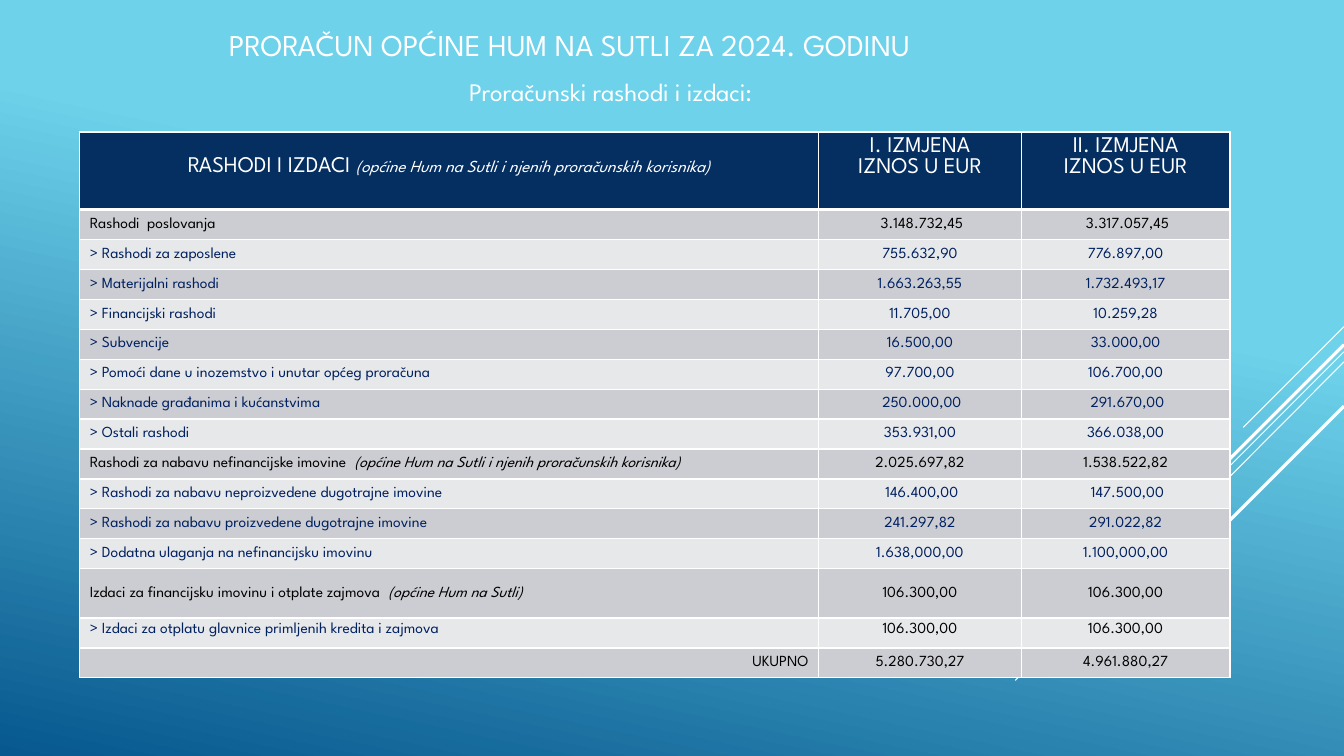
from lxml.etree import SubElement
from pptx import Presentation
from pptx.dml.color import RGBColor
from pptx.enum.shapes import MSO_CONNECTOR
from pptx.enum.text import MSO_ANCHOR, MSO_AUTO_SIZE, PP_ALIGN
from pptx.oxml.ns import qn
from pptx.util import Inches, Pt

FONT = "League Spartan"
WHITE, BLACK, NAVY, HEADER = "FFFFFF", "000000", "002060", "052F61"
BANDS = ["CCCDD2", "E7E8EA"]
USERS_NOTE = "(općine Hum na Sutli i njenih proračunskih korisnika)"
COLUMN_WIDTHS = [7.33, 2.01, 2.07]
TABLE_HEIGHT, HEADER_HEIGHT, LOANS_HEIGHT = 5.42, 0.77, 0.49
LOANS_ROW, REPAYMENT_ROW, TOTAL_ROW = 13, 14, 15

EXPENSES = [
    ("Rashodi  poslovanja", "", " 3.148.732,45", " 3.317.057,45"),
    ("> Rashodi za zaposlene", "", "755.632,90", "776.897,00"),
    ("> Materijalni rashodi", "", "1.663.263,55", "1.732.493,17"),
    ("> Financijski rashodi", "", "11.705,00", "10.259,28"),
    ("> Subvencije", "", "16.500,00", "33.000,00"),
    ("> Pomoći dane u inozemstvo i unutar općeg proračuna", "", "97.700,00", "106.700,00"),
    ("> Naknade građanima i kućanstvima", "", " 250.000,00", " 291.670,00"),
    ("> Ostali rashodi", "", "353.931,00", "366.038,00"),
    ("Rashodi za nabavu nefinancijske imovine  ", USERS_NOTE, "2.025.697,82", "1.538.522,82"),
    ("> Rashodi za nabavu neproizvedene dugotrajne imovine", "", " 146.400,00", " 147.500,00"),
    ("> Rashodi za nabavu proizvedene dugotrajne imovine", "", "241.297,82", "291.022,82"),
    ("> Dodatna ulaganja na nefinancijsku imovinu", "", "1.638,000,00", "1.100,000,00"),
    ("Izdaci za financijsku imovinu i otplate zajmova  ", "(općine Hum na Sutli) ",
     "106.300,00", "106.300,00"),
    ("> Izdaci za otplatu glavnice primljenih kredita i zajmova", "", "106.300,00", "106.300,00"),
    ("UKUPNO", "", "5.280.730,27", "4.961.880,27"),
]

RAYS = [
    (3.24, 12.33, 4.24, 0.75),
    (3.49, 10.07, 6.75, 0.75),
    (3.59, 11.26, 5.67, 0.75),
    (3.42, 11.42, 5.33, 2.25),
    (4.03, 11.94, 5.42, 2.25),
]


def color(value):
    """Turn a hex string into a colour."""
    return RGBColor.from_string(value)


def add_run(paragraph, text, size, text_color, italic=False):
    """Append one formatted run."""
    run = paragraph.add_run()
    run.text = text
    run.font.name = FONT
    run.font.size = Pt(size)
    run.font.bold = False
    run.font.italic = italic
    run.font.color.rgb = color(text_color)


def set_background(slide):
    """Fill the slide with a blue gradient."""
    fill = slide.background.fill
    fill.gradient()
    fill.gradient_angle = 258
    for stop, (position, value) in zip(fill.gradient_stops, [(0.35, "6ED2EB"), (1, "06588E")]):
        stop.position = position
        stop.color.rgb = color(value)


def add_ray(slide, top, end_left, end_top, width):
    """Draw a diagonal line from the right edge of the slide."""
    ray = slide.shapes.add_connector(
        MSO_CONNECTOR.STRAIGHT, Inches(13.33), Inches(top), Inches(end_left), Inches(end_top))
    ray.line.color.rgb = color(WHITE)
    ray.line.width = Pt(width)
    SubElement(ray._element.spPr, qn("a:effectLst"))


def write_heading(shape, box, text, size, alignment, anchor):
    """Place a text shape and write its single line."""
    shape.left, shape.top, shape.width, shape.height = [Inches(length) for length in box]
    frame = shape.text_frame
    frame.word_wrap = True
    frame.auto_size = MSO_AUTO_SIZE.NONE
    frame.vertical_anchor = anchor
    paragraph = frame.paragraphs[0]
    paragraph.alignment = alignment
    add_run(paragraph, text, size, WHITE)


def style_cell(cell, fill_color, top=1, bottom=1, anchor=MSO_ANCHOR.MIDDLE):
    """Give a cell white borders, a fill and an anchor."""
    properties = cell._tc.get_or_add_tcPr()
    for tag, width in [("lnL", 1), ("lnR", 1), ("lnT", top), ("lnB", bottom)]:
        line = SubElement(properties, qn(f"a:{tag}"), w=str(Pt(width)))
        solid = SubElement(line, qn("a:solidFill"))
        SubElement(solid, qn("a:srgbClr"), val=WHITE)
    cell.fill.solid()
    cell.fill.fore_color.rgb = color(fill_color)
    cell.vertical_anchor = anchor


def write_cell(cell, lines, alignment):
    """Write lines, each a list of run settings, into a cell."""
    frame = cell.text_frame
    for index, runs in enumerate(lines):
        paragraph = frame.add_paragraph() if index else frame.paragraphs[0]
        paragraph.alignment = alignment
        for run in runs:
            add_run(paragraph, *run)


def fill_header(table):
    """Write the header row."""
    headings = [[[("RASHODI I IZDACI ", 16, WHITE), (USERS_NOTE, 12, WHITE, True)]]]
    for edition in ["I. IZMJENA", "II. IZMJENA"]:
        headings.append([[(edition, 16, WHITE)], [("IZNOS U EUR", 16, WHITE)]])
    for column, lines in enumerate(headings):
        cell = table.cell(0, column)
        style_cell(cell, HEADER, bottom=3, anchor=MSO_ANCHOR.TOP)
        write_cell(cell, lines, PP_ALIGN.CENTER)
    table.cell(0, 0).margin_top = Inches(0.25)


def fill_expense(table, row, label, note, *amounts):
    """Write one expense row."""
    label_color = NAVY if label.startswith(">") else BLACK
    amount_color = BLACK if row == REPAYMENT_ROW else label_color
    label_runs = [(label, 11, label_color)]
    if note:
        label_runs.append((note, 11, label_color, True))
    contents = [label_runs] + [[(amount, 11, amount_color)] for amount in amounts]
    anchor = MSO_ANCHOR.TOP if row == REPAYMENT_ROW else MSO_ANCHOR.MIDDLE
    label_alignment = {LOANS_ROW: PP_ALIGN.JUSTIFY, TOTAL_ROW: PP_ALIGN.RIGHT}.get(row, PP_ALIGN.LEFT)
    for column, runs in enumerate(contents):
        cell = table.cell(row, column)
        style_cell(cell, BANDS[(row - 1) % 2], top=3 if row == 1 else 1, anchor=anchor)
        write_cell(cell, [runs], PP_ALIGN.CENTER if column else label_alignment)


def add_expense_table(slide):
    """Build the table of expenses."""
    table = slide.shapes.add_table(
        len(EXPENSES) + 1, len(COLUMN_WIDTHS), Inches(0.79), Inches(1.31),
        Inches(sum(COLUMN_WIDTHS)), Inches(TABLE_HEIGHT)).table
    table.first_row = False
    table.horz_banding = False
    for column, width in zip(table.columns, COLUMN_WIDTHS):
        column.width = Inches(width)
    plain_height = (TABLE_HEIGHT - HEADER_HEIGHT - LOANS_HEIGHT) / (len(EXPENSES) - 1)
    special_heights = {0: HEADER_HEIGHT, LOANS_ROW: LOANS_HEIGHT}
    for index, row in enumerate(table.rows):
        row.height = Inches(special_heights.get(index, plain_height))
    fill_header(table)
    for row, expense in enumerate(EXPENSES, start=1):
        fill_expense(table, row, *expense)


def main():
    """Build and save the budget slide."""
    presentation = Presentation()
    presentation.slide_width = Inches(13.33)
    presentation.slide_height = Inches(7.5)
    slide = presentation.slides.add_slide(presentation.slide_layouts[5])
    set_background(slide)
    for ray in RAYS:
        add_ray(slide, *ray)
    write_heading(slide.shapes.title, (1.01, 0.18, 9.28, 0.53),
                  "PRORAČUN OPĆINE HUM NA SUTLI ZA 2024. GODINU", 21.6,
                  PP_ALIGN.CENTER, MSO_ANCHOR.MIDDLE)
    subtitle = slide.shapes.add_textbox(0, 0, 0, 0)
    write_heading(subtitle, (2.47, 0.48, 5.09, 0.63), "Proračunski rashodi i izdaci:", 18,
                  PP_ALIGN.RIGHT, MSO_ANCHOR.BOTTOM)
    add_expense_table(slide)
    presentation.save("out.pptx")


if __name__ == "__main__":
    main()
